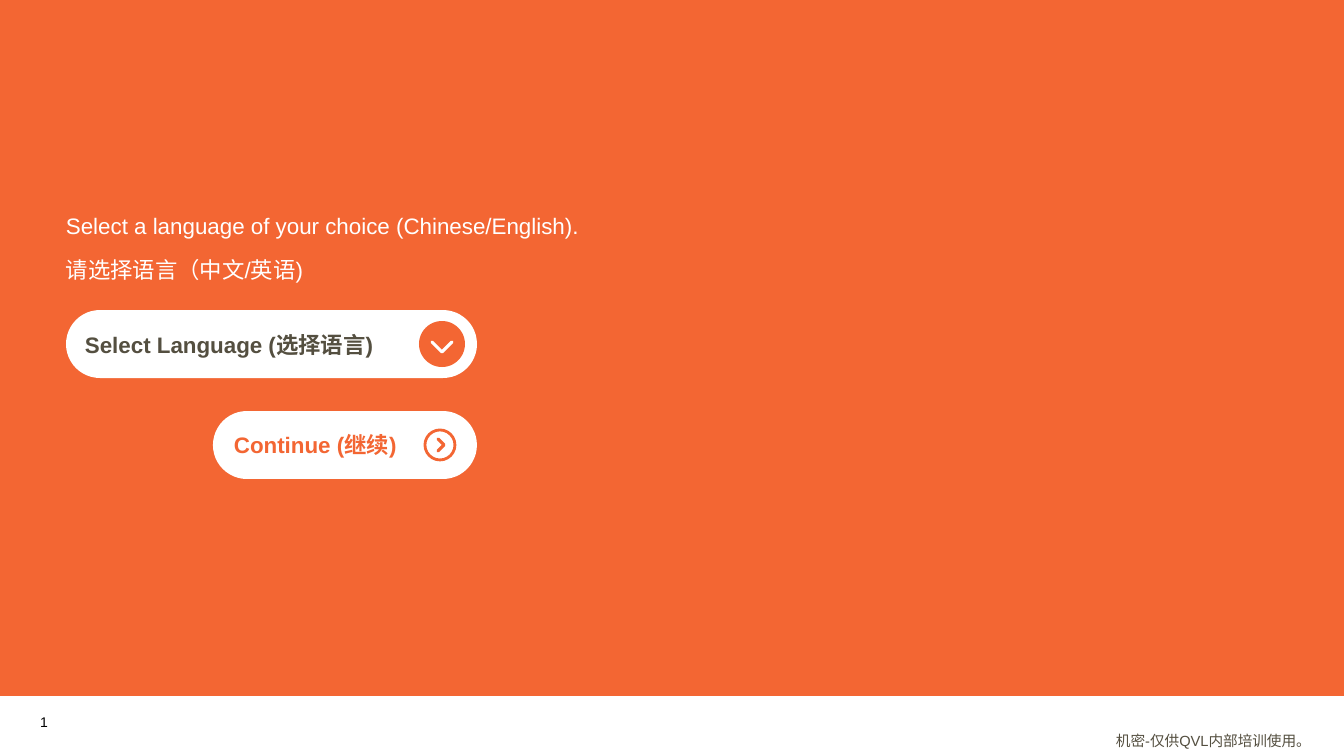
from pptx import Presentation, util as u
from pptx.dml.color import RGBColor
from pptx.enum import shapes, text
from pptx.oxml import parse_xml
from pptx.oxml.ns import nsdecls

PX = 914400 / 100.8
THEME = {
    "orange": RGBColor.from_string("F36633"),
    "white": RGBColor.from_string("FFFFFF"),
    "brown": RGBColor.from_string("544F40"),
    "black": RGBColor.from_string("000000"),
    "font": "Arial",
    "body": u.Pt(16),
    "footer": u.Pt(10.5),
    "number": u.Pt(10),
    "stroke": u.Pt(2),
}


def emu(*lengths):
    return [round(n * PX) for n in lengths]


def style(sp, fill=None, line=None):
    sp.shadow.inherit = False
    for part, color in ((sp.fill, fill), (sp.line.fill, line)):
        if color:
            part.solid()
            part.fore_color.rgb = THEME[color]
        else:
            part.background()
    if line:
        sp.line.width = THEME["stroke"]


prs = Presentation()
prs.slide_width, prs.slide_height = emu(1344, 756)
s = prs.slides.add_slide(prs.slide_layouts[6])

kinds = shapes.MSO_SHAPE
panels = [
    (kinds.RECTANGLE, (0, 0, 1344, 696), "orange", None),
    (kinds.ROUNDED_RECTANGLE, (66, 310, 411, 68), "white", None),
    (kinds.ROUNDED_RECTANGLE, (213, 411, 264, 68), "white", None),
    (kinds.OVAL, (419, 321, 46, 46), "orange", None),
    (kinds.OVAL, (425, 430, 30, 30), None, "orange"),
]
for kind, box, fill, line in panels:
    sp = s.shapes.add_shape(kind, *emu(*box))
    style(sp, fill, line)
    if kind == kinds.ROUNDED_RECTANGLE:
        sp.adjustments[0] = 0.5

chevrons = [
    ([(432, 342), (442, 352), (452, 342)], "white"),
    ([(438, 439), (444, 445), (438, 451)], "orange"),
]
for points, color in chevrons:
    builder = s.shapes.build_freeform(*points[0], scale=PX)
    builder.add_line_segments(points[1:], close=False)
    sp = builder.convert_to_shape()
    style(sp, line=color)
    sp.line.width = u.Pt(2.25)
    ln = sp.line._get_or_add_ln()
    ln.set("cap", "rnd")
    ln.append(parse_xml(f"<a:round {nsdecls('a')}/>"))

top, middle, bottom = text.MSO_ANCHOR.TOP, text.MSO_ANCHOR.MIDDLE, text.MSO_ANCHOR.BOTTOM
labels = [
    ((66, 207, 529, 82), ["Select a language of your choice (Chinese/English).", "请选择语言（中文/英语)"],
     "body", "white", False, top, (5, 10)),
    ((85, 326, 312, 37), ["Select Language (选择语言)"], "body", "brown", True, middle, (5, 10)),
    ((234, 426, 174, 37), ["Continue (继续)"], "body", "orange", True, middle, (5, 10)),
    ((40, 700, 59, 30), ["1"], "number", "black", False, bottom, (0, 0)),
    ((1116, 727, 228, 28), ["机密-仅供QVL内部培训使用。"], "footer", "brown", False, top, (5, 0)),
]
for box, lines, size, color, bold, anchor, (pad, right) in labels:
    tf = s.shapes.add_textbox(*emu(*box)).text_frame
    pad, right = emu(pad, right)
    frame = {"word_wrap": True, "vertical_anchor": anchor, "margin_left": 0,
             "margin_right": right, "margin_top": pad, "margin_bottom": pad}
    for name, value in frame.items():
        setattr(tf, name, value)
    for i, line in enumerate(lines):
        p = tf.add_paragraph() if i else tf.paragraphs[0]
        if len(lines) > 1:
            p.space_before = u.Pt(6 if i else 0)
            p.space_after = u.Pt(6)
        r = p.add_run()
        r.text = line
        for name, value in {"name": THEME["font"], "size": THEME[size], "bold": bold}.items():
            setattr(r.font, name, value)
        r.font.color.rgb = THEME[color]

prs.save("out.pptx")
